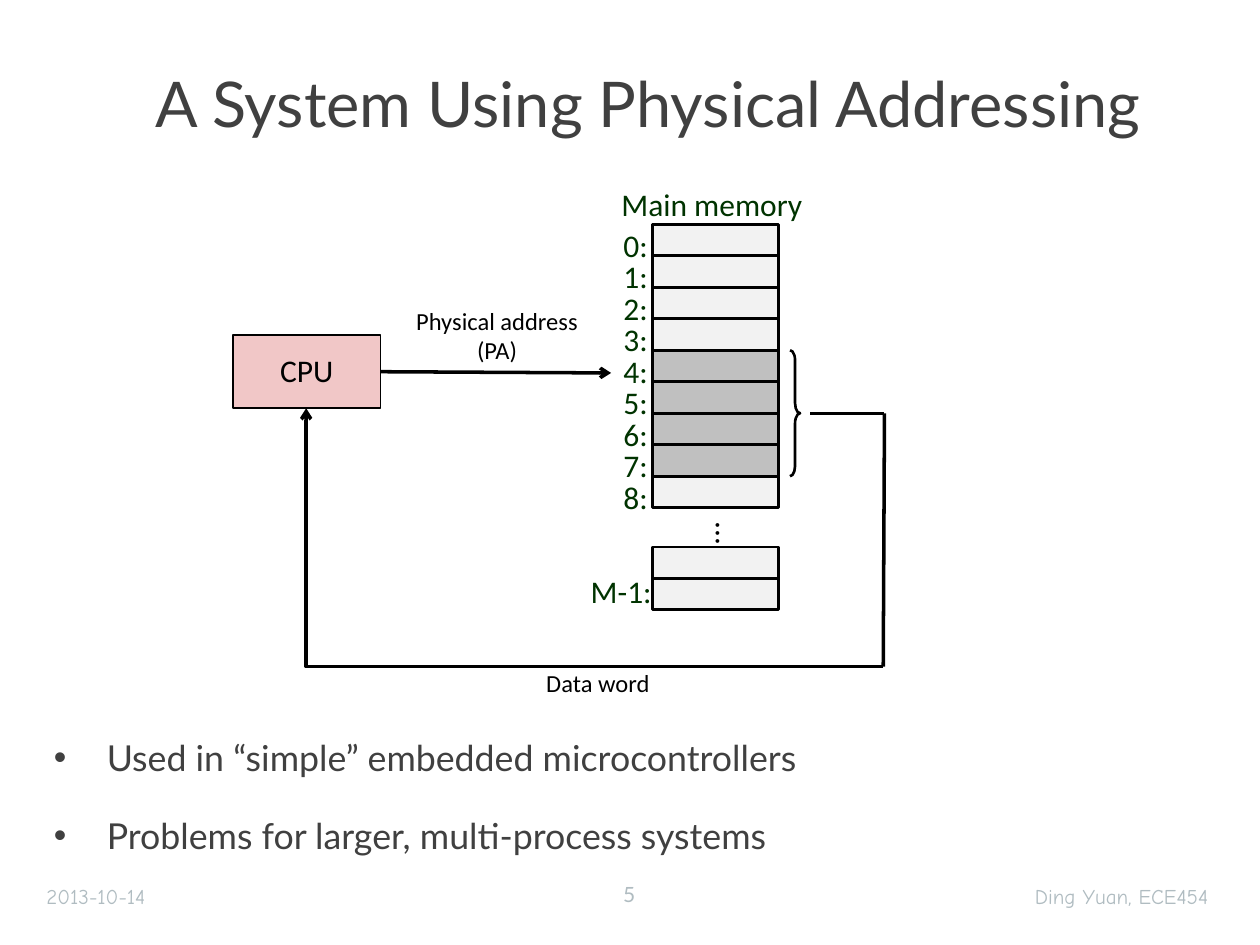
import pptx
import pptx.util
import pptx.dml.color
import pptx.enum.shapes
import pptx.enum.text
import pptx.oxml
import pptx.oxml.ns
from lxml import etree

Inches, Pt = pptx.util.Inches, pptx.util.Pt
RGB = pptx.dml.color.RGBColor
SHAPE = pptx.enum.shapes.MSO_SHAPE
LINK = pptx.enum.shapes.MSO_CONNECTOR
ALIGN = pptx.enum.text.PP_ALIGN
ANCHOR = pptx.enum.text.MSO_ANCHOR
FIT = pptx.enum.text.MSO_AUTO_SIZE
qn = pptx.oxml.ns.qn

BLACK = RGB(0, 0, 0)
GRAY = RGB(0x40, 0x40, 0x40)
PALE = RGB(0xB0, 0xBC, 0xC1)
GREEN = RGB(0x00, 0x33, 0x00)
PINK = RGB(0xF1, 0xC7, 0xC7)
LIGHT = RGB(0xF2, 0xF2, 0xF2)
DARK = RGB(0xC0, 0xC0, 0xC0)

TITLE = "A System Using Physical Addressing"
BULLETS = ["Used in “simple” embedded microcontrollers",
           "Problems for larger, multi-process systems"]
CELLS = 9
WORD = range(4, 8)  # addresses of the data word

# Formats: font values, then paragraph values
HEAD = (dict(name="Lato", size=Pt(36), color=GRAY), dict(alignment=ALIGN.CENTER))
BODY = (dict(name="Lato", size=Pt(20.4), color=GRAY), {})
ADDR = (dict(name="Calibri", size=Pt(18), color=GREEN), dict(line_spacing=0.88))
MEMO = (ADDR[0], dict(line_spacing=0.88, alignment=ALIGN.CENTER))
MID = dict(line_spacing=0.98, alignment=ALIGN.CENTER)
UNIT = (dict(name="Calibri", size=Pt(18), color=BLACK), MID)
NOTE = (dict(name="Calibri", size=Pt(14), color=BLACK), MID)
FOOT = dict(name="Comic Neue", size=Pt(12), color=PALE)

# Text, box, format, anchor
LABELS = [
    (["Main memory"], (4.81, 1.46, 1.68, 0.36), MEMO, ANCHOR.TOP),
    (["M-1:"], (4.59, 4.53, 0.7, 0.36), ADDR, ANCHOR.TOP),
    (["Physical address", "(PA)"], (3.18, 2.33, 1.53, 0.68), NOTE, ANCHOR.MIDDLE),
    (["Data word"], (4.2, 5.26, 1.09, 0.34), NOTE, ANCHOR.MIDDLE),
]
FOOTERS = [
    ("2013-10-14", (0.27, 6.97, 2.33, 0.28), (FOOT, {})),
    ("Ding Yuan, ECE454", (6.52, 6.97, 3.17, 0.28),
     (FOOT, dict(alignment=ALIGN.RIGHT))),
    ("5", (4.58, 6.95, 0.83, 0.3),
     (dict(FOOT, name="Lato"), dict(alignment=ALIGN.CENTER))),
]
# Start, end, arrowhead
WIRES = [
    ((3.02, 2.95), (4.85, 2.96), True),
    ((6.43, 3.28), (7.02, 3.28), False),
    ((7.02, 3.28), (7.01, 5.29), False),
]
MEM_X, MEM_Y, CELL_W, CELL_H = 5.18, 1.78, 1, 0.25
TAIL_Y = 4.34


def inch(vals):
    return [Inches(v) for v in vals]


def write(shape, lines, style, anchor, wrap=True, grow=False):
    frame = shape.text_frame
    frame.text = "\n".join(lines)
    frame.word_wrap = wrap
    frame.vertical_anchor = anchor
    frame.auto_size = FIT.SHAPE_TO_FIT_TEXT if grow else FIT.NONE
    font, para = style
    for par in frame.paragraphs:
        for key, val in para.items():
            setattr(par, key, val)
        for run in par.runs:
            for key, val in font.items():
                if key == "color":
                    run.font.color.rgb = val
                else:
                    setattr(run.font, key, val)
    return frame


def label(slide, lines, box, style, anchor, **opts):
    return write(slide.shapes.add_textbox(*inch(box)), lines, style, anchor, **opts)


def block(slide, kind, box, fill, width):
    shape = slide.shapes.add_shape(kind, *inch(box))
    shape.shadow.inherit = False
    if fill is None:
        shape.fill.background()
    else:
        shape.fill.solid()
        shape.fill.fore_color.rgb = fill
    shape.line.color.rgb = BLACK
    shape.line.width = Pt(width)
    return shape


def wire(slide, kind, start, end, arrow):
    line = slide.shapes.add_connector(kind, *inch(start + end))
    line.line.color.rgb = BLACK
    line.line.width = Pt(2)
    props = line._element.spPr
    if arrow:
        etree.SubElement(props.find(qn("a:ln")), qn("a:tailEnd"), type="arrow")
    etree.SubElement(props, qn("a:effectLst"))
    return props


def bullet(par):
    props = par._p.get_or_add_pPr()
    props.set("marL", str(Inches(0.42)))
    props.set("indent", str(-Inches(0.42)))
    tint = etree.SubElement(props, qn("a:buClr"))
    etree.SubElement(tint, qn("a:srgbClr"), val=str(GRAY))
    etree.SubElement(props, qn("a:buFont"), typeface="Arial")
    etree.SubElement(props, qn("a:buChar"), char="•")


def memory(slide):
    rows = [MEM_Y + i * CELL_H for i in range(CELLS)]
    tail = [TAIL_Y, TAIL_Y + CELL_H]
    for i, top in enumerate(rows + tail):
        fill = DARK if i in WORD else LIGHT
        block(slide, SHAPE.RECTANGLE, (MEM_X, top, CELL_W, CELL_H), fill, 1.5)
    for i, top in enumerate(rows):
        label(slide, [f"{i}:"], (4.85, top, 0.4, 0.36), ADDR, ANCHOR.TOP,
              wrap=False, grow=True)
    dots = label(slide, ["..."], (5.27, 4.04, 1, 0.25), UNIT, ANCHOR.MIDDLE, wrap=False)
    dots._txBody.bodyPr.set("vert", "eaVert")
    brace = block(slide, SHAPE.RIGHT_BRACE,
                  (6.27, rows[WORD[0]], 0.08, len(WORD) * CELL_H), None, 1.5)
    brace.adjustments[0] = 1
    brace.adjustments[1] = 0.5


def main():
    deck = pptx.Presentation()
    deck.slide_width, deck.slide_height = inch((10, 7.5))
    slide = deck.slides.add_slide(deck.slide_layouts[5])

    title = slide.shapes.title
    title.left, title.top, title.width, title.height = inch((0.38, 0.38, 9.53, 0.86))
    write(title, [TITLE], HEAD, ANCHOR.MIDDLE)

    body = label(slide, BULLETS, (0.33, 5.79, 9.53, 0.96), BODY, ANCHOR.TOP)
    for i, par in enumerate(body.paragraphs):
        bullet(par)
        if i:
            par.space_before = Pt(20)

    memory(slide)
    cpu = block(slide, SHAPE.RECTANGLE, (1.85, 2.66, 1.17, 0.58), PINK, 1)
    write(cpu, ["CPU"], UNIT, ANCHOR.MIDDLE, wrap=False)
    for lines, box, style, anchor in LABELS:
        label(slide, lines, box, style, anchor, wrap=False, grow=True)

    for start, end, arrow in WIRES:
        wire(slide, LINK.STRAIGHT, start, end, arrow)
    # Half a turn makes the elbow run left first, then up to the CPU
    back = wire(slide, LINK.ELBOW, (2.43, 3.24), (7.01, 5.29), True)
    back.find(qn("a:xfrm")).set("rot", "10800000")
    guides = back.find(qn("a:prstGeom")).find(qn("a:avLst"))
    etree.SubElement(guides, qn("a:gd"), name="adj1", fmla="val 100000")

    for text, box, style in FOOTERS:
        label(slide, [text], box, style, ANCHOR.MIDDLE)
    deck.save("out.pptx")


if __name__ == "__main__":
    main()
